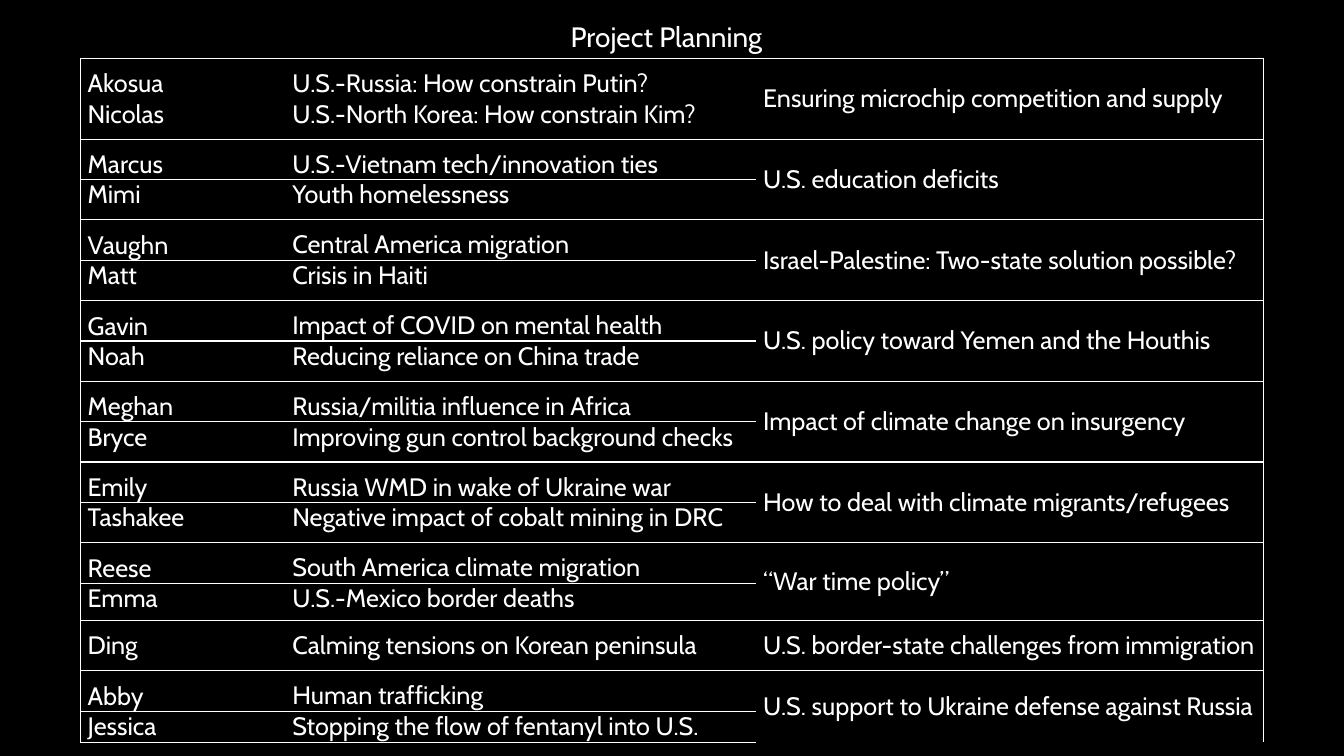
from lxml import etree
from pptx import Presentation
from pptx import util as u
from pptx.dml.color import RGBColor
from pptx.enum import text
from pptx.oxml import ns

FONT = "Cabin"
WHITE, BLACK = "FFFFFF", "000000"
TITLE = "Project Planning"
COLUMNS = [2.03, 4.67, 5.03]
ROW, SIDE, GAP = 0.4, 0.07, 0.1
TEAMS = [
    ([("Akosua", "U.S.-Russia: How constrain Putin?"),
      ("Nicolas", "U.S.-North Korea: How constrain Kim?")],
     "Ensuring microchip competition and supply"),
    ([("Marcus", "U.S.-Vietnam tech/innovation ties"),
      ("Mimi", "Youth homelessness")],
     "U.S. education deficits"),
    ([("Vaughn", "Central America migration"),
      ("Matt", "Crisis in Haiti")],
     "Israel-Palestine: Two-state solution possible?"),
    ([("Gavin", "Impact of COVID on mental health"),
      ("Noah", "Reducing reliance on China trade")],
     "U.S. policy toward Yemen and the Houthis"),
    ([("Meghan", "Russia/militia influence in Africa"),
      ("Bryce", "Improving gun control background checks")],
     "Impact of climate change on insurgency"),
    ([("Emily", "Russia WMD in wake of Ukraine war"),
      ("Tashakee", "Negative impact of cobalt mining in DRC")],
     "How to deal with climate migrants/refugees"),
    ([("Reese", "South America climate migration"),
      ("Emma", "U.S.-Mexico border deaths")],
     "“War time policy”"),
    ([("Ding", "Calming tensions on Korean peninsula")],
     "U.S. border-state challenges from immigration"),
    ([("Abby", "Human trafficking"),
      ("Jessica", "Stopping the flow of fentanyl into U.S.")],
     "U.S. support to Ukraine defense against Russia"),
]
HEIGHTS = {"Emma": 0.37, "Ding": 0.5, "Jessica": 0.31}
UNDIVIDED = {"Akosua", "Nicolas"}
TOP, MIDDLE, BOTTOM = (text.MSO_ANCHOR.TOP, text.MSO_ANCHOR.MIDDLE,
                       text.MSO_ANCHOR.BOTTOM)


def color(value):
    return RGBColor.from_string(value)


def write(frame, words, size):
    para = frame.paragraphs[0]
    para.alignment = text.PP_ALIGN.LEFT
    span = para.add_run()
    span.text = words
    span.font.name = FONT
    span.font.size = u.Pt(size)
    span.font.color.rgb = color(WHITE)


def set_borders(cell, sides):
    properties = cell._tc.get_or_add_tcPr()
    for side in "LRTB":
        line = etree.SubElement(properties, ns.qn("a:ln" + side), w=str(u.Pt(1)))
        if side in sides:
            fill = etree.SubElement(line, ns.qn("a:solidFill"))
            etree.SubElement(fill, ns.qn("a:srgbClr"), val=WHITE)
        else:
            etree.SubElement(line, ns.qn("a:noFill"))


def fill_cell(cell, words, anchor, above=0, below=0):
    cell.margin_left = cell.margin_right = u.Inches(SIDE)
    cell.margin_top, cell.margin_bottom = u.Inches(above), u.Inches(below)
    cell.vertical_anchor = anchor
    write(cell.text_frame, words, 18)


def add_team(table, first, members, joint):
    last = first + len(members) - 1
    for row, (name, topic) in enumerate(members, first):
        table.rows[row].height = u.Inches(HEIGHTS.get(name, ROW))
        cells = [table.cell(row, column) for column in range(3)]
        if first == last:
            fill_cell(cells[0], name, BOTTOM, below=GAP)
            fill_cell(cells[1], topic, MIDDLE)
        elif row == first:
            fill_cell(cells[0], name, TOP, above=GAP)
            fill_cell(cells[1], topic, BOTTOM)
        else:
            fill_cell(cells[0], name, TOP, below=0 if name in HEIGHTS else GAP)
            fill_cell(cells[1], topic, TOP)
        divided = name not in UNDIVIDED
        inner = ("T" if row == first or divided else "") + (
            "B" if row == last or divided else "")
        outer = ("T" if row == first else "") + ("B" if row == last else "")
        for cell, sides in zip(cells, ("L" + inner, inner, "R" + outer)):
            set_borders(cell, sides)
            cell.fill.background()
    shared = table.cell(first, 2)
    if last > first:
        shared.merge(table.cell(last, 2))
    fill_cell(shared, joint, MIDDLE)
    return last + 1


def main():
    deck = Presentation()
    deck.slide_width, deck.slide_height = u.Inches(13.33), u.Inches(7.5)
    page = deck.slides.add_slide(deck.slide_layouts[5])
    page.background.fill.solid()
    page.background.fill.fore_color.rgb = color(BLACK)

    title = page.shapes.title
    title.left, title.top = u.Inches(5.56), u.Inches(0.14)
    title.width, title.height = u.Inches(2.11), u.Inches(0.44)
    frame = title.text_frame
    frame.word_wrap = False
    frame.auto_size = text.MSO_AUTO_SIZE.SHAPE_TO_FIT_TEXT
    frame.vertical_anchor = TOP
    write(frame, TITLE, 20)

    count = sum(len(members) for members, joint in TEAMS)
    table = page.shapes.add_table(
        count, len(COLUMNS), u.Inches(0.8), u.Inches(0.58),
        u.Inches(sum(COLUMNS)), u.Inches(6.78)).table
    table.first_row = table.horz_banding = False
    for column, width in zip(table.columns, COLUMNS):
        column.width = u.Inches(width)
    row = 0
    for members, joint in TEAMS:
        row = add_team(table, row, members, joint)

    deck.save("out.pptx")


if __name__ == "__main__":
    main()
